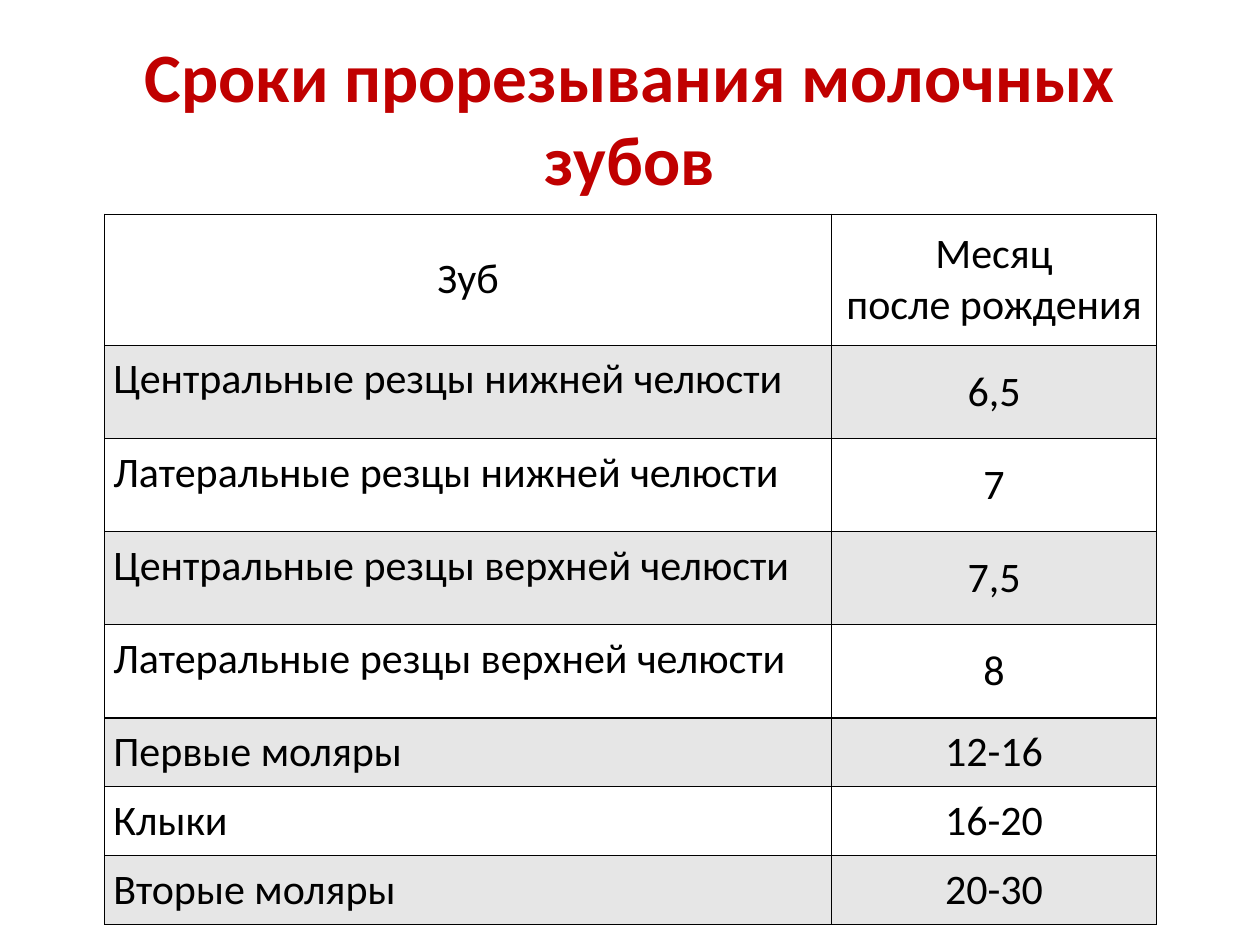
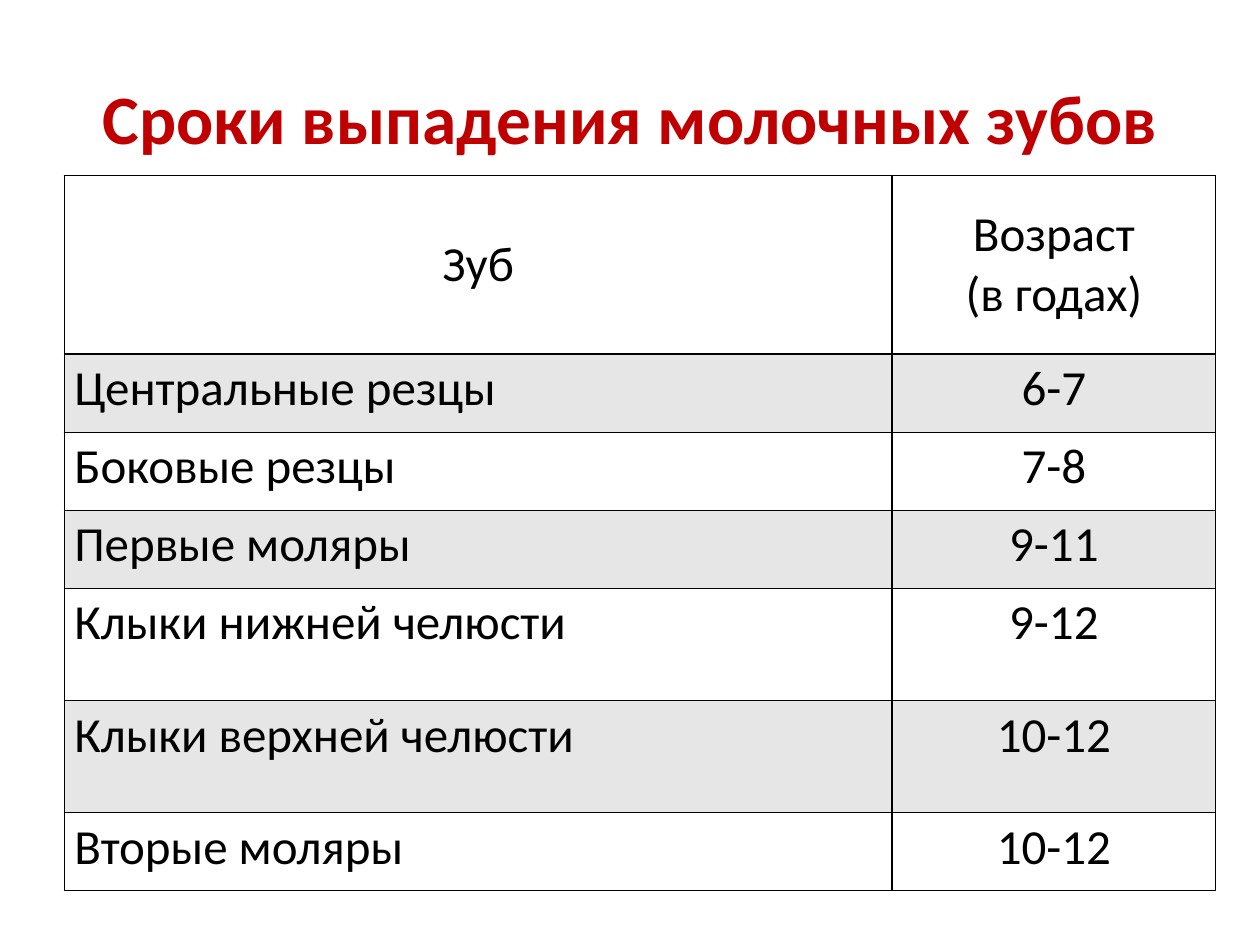
from lxml import etree
from pptx import Presentation
from pptx.dml.color import RGBColor
from pptx.enum.text import MSO_ANCHOR, PP_ALIGN
from pptx.oxml.ns import qn
from pptx.util import Inches, Pt

TOP, MIDDLE = MSO_ANCHOR.TOP, MSO_ANCHOR.MIDDLE
LEFT, CENTER = PP_ALIGN.LEFT, PP_ALIGN.CENTER
FONT = "Calibri"
COLORS = {"title": "C00000", "text": "000000", "border": "000000",
          "plain": "FFFFFF", "band": "E6E6E6"}
TITLE_BOX = (0.5, 0.3, 9, 1.25)
TITLE_ONLY = 5

ERUPTION = {
    "title": "Сроки прорезывания молочных зубов",
    "rows": [
        ("Зуб", "Месяц\nпосле рождения"),
        ("Центральные резцы нижней челюсти", "6,5"),
        ("Латеральные резцы нижней челюсти", "7"),
        ("Центральные резцы верхней челюсти", "7,5"),
        ("Латеральные резцы верхней челюсти", "8"),
        ("Первые моляры", "12-16"),
        ("Клыки", "16-20"),
        ("Вторые моляры", "20-30"),
    ],
    "box": (0.83, 1.7, 8.35, 5.59),
    "widths": (5.77, 2.58),
    "heights": [1.04] + [0.74] * 4 + [0.51] * 3,
    "size": 24, "margins": (0.07, 0.07), "value_anchor": MIDDLE,
}
LOSS = {
    "title": "Сроки выпадения молочных зубов",
    "rows": [
        ("Зуб", "Возраст\n(в годах)"),
        ("Центральные резцы", "6-7"),
        ("Боковые резцы", "7-8"),
        ("Первые моляры", "9-11"),
        ("Клыки нижней челюсти", "9-12"),
        ("Клыки верхней челюсти", "10-12"),
        ("Вторые моляры", "10-12"),
    ],
    "box": (0.51, 1.39, 9.13, 5.67),
    "widths": (6.57, 2.57),
    "heights": [1.42] + [0.62] * 3 + [0.89] * 2 + [0.62],
    "size": 28, "margins": (0.08, 0.04), "value_anchor": TOP,
}


def write(frame, text, *, size, color, bold=False, align=LEFT):
    """Fill a text frame, one paragraph per line of text."""
    frame.text = text
    for paragraph in frame.paragraphs:
        paragraph.alignment = align
        for run in paragraph.runs:
            run.font.name = FONT
            run.font.size = Pt(size)
            run.font.bold = bold
            run.font.color.rgb = RGBColor.from_string(COLORS[color])


def add_borders(cell):
    properties = cell._tc.get_or_add_tcPr()
    for side in ("lnL", "lnR", "lnT", "lnB"):
        line = etree.SubElement(properties, qn(f"a:{side}"), w=str(Pt(0.75)))
        fill = etree.SubElement(line, qn("a:solidFill"))
        etree.SubElement(fill, qn("a:srgbClr"), val=COLORS["border"])


def add_title(slide, text, box):
    title = slide.shapes.title
    title.left, title.top, title.width, title.height = map(Inches, box)
    title.text_frame.word_wrap = True
    title.text_frame.vertical_anchor = MIDDLE
    write(title.text_frame, text, size=39.6, color="title", bold=True, align=CENTER)


def add_teeth_table(slide, content):
    rows = content["rows"]
    table = slide.shapes.add_table(len(rows), 2, *map(Inches, content["box"])).table
    table.first_row = table.horz_banding = False
    for column, width in zip(table.columns, content["widths"]):
        column.width = Inches(width)
    for row, height in zip(table.rows, content["heights"]):
        row.height = Inches(height)

    side_margin, end_margin = map(Inches, content["margins"])
    for r, row in enumerate(rows):
        for c, text in enumerate(row):
            cell = table.cell(r, c)
            add_borders(cell)
            cell.fill.solid()
            cell.fill.fore_color.rgb = RGBColor.from_string(
                COLORS["band" if r % 2 else "plain"])
            cell.margin_left = cell.margin_right = side_margin
            cell.margin_top = cell.margin_bottom = end_margin
            # Header is centred; below it only the values are
            if r == 0:
                cell.vertical_anchor = MIDDLE
            else:
                cell.vertical_anchor = content["value_anchor"] if c else TOP
            write(cell.text_frame, text, size=content["size"], color="text",
                  align=CENTER if r == 0 or c else LEFT)


def add_teeth_slide(deck, content):
    slide = deck.slides.add_slide(deck.slide_layouts[TITLE_ONLY])
    add_title(slide, content["title"], TITLE_BOX)
    add_teeth_table(slide, content)


def main():
    deck = Presentation()
    deck.slide_width, deck.slide_height = Inches(10), Inches(7.5)
    for content in (ERUPTION, LOSS):
        add_teeth_slide(deck, content)
    deck.save("out.pptx")


if __name__ == "__main__":
    main()
